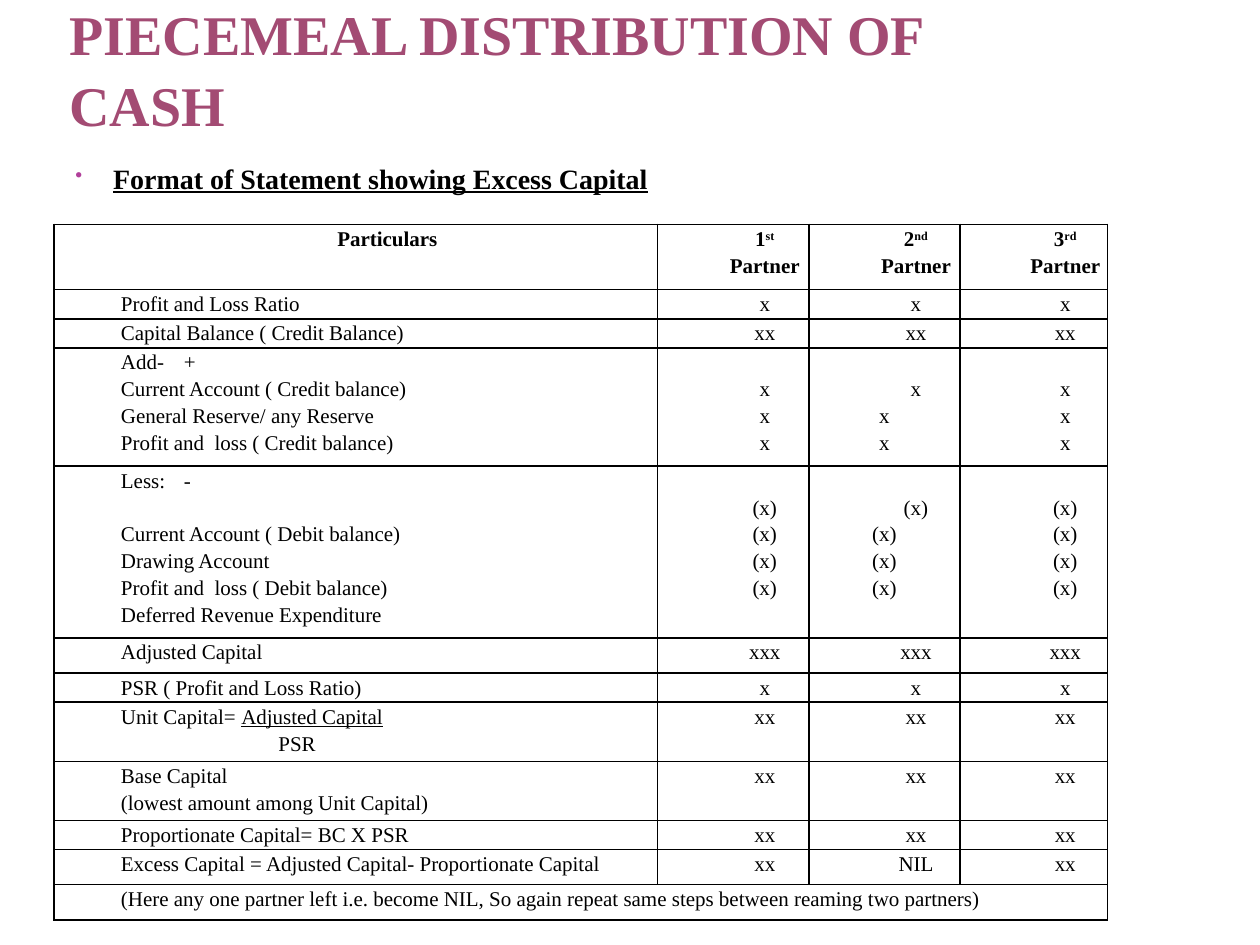
from dataclasses import dataclass

from lxml import etree
from pptx import Presentation
from pptx.dml.color import RGBColor
from pptx.enum.text import MSO_ANCHOR, PP_ALIGN as Align
from pptx.oxml.ns import qn
from pptx.util import Inches, Pt


@dataclass(frozen=True)
class Theme:
    font: str = "Times New Roman"
    title_color: str = "A34B73"
    bullet_color: str = "B13F9A"
    ink: str = "000000"
    title_size: float = 32
    heading_size: float = 16
    table_size: float = 12
    line_spacing: float = 1.15
    blank_line: float = 15.25
    border: float = 1


@dataclass(frozen=True)
class Line:
    """One paragraph of a table cell; each run is (text, style)."""
    runs: tuple
    indent: float = 0.5
    tab: float = 0
    space_before: float = 0


THEME = Theme()


def plain(text, **layout):
    return Line(((text, ""),), **layout)


def partner(number, suffix):
    return [Line(((number, "bold"), (suffix, "bold super"), (" Partner", "bold")))]


def same(value):
    """The same single value for all three partners."""
    return [[plain(value)] for _ in range(3)]


def stacked(value, count):
    """Repeated values; the second partner's are indented only on the first line."""
    columns = []
    for later_indent in (0.5, 0, 0.5):
        later = [plain(value, indent=later_indent) for _ in range(count - 1)]
        columns.append([plain(value)] + later)
    return columns


# Each row: height, particulars, partner values
ROWS = [
    (0.52, [Line((("Particulars", "bold"),))],
     [partner("1", "st"), partner("2", "nd"), partner("3", "rd")]),
    (0.23, [plain("Profit and Loss Ratio")], same("x")),
    (0.23, [plain("Capital Balance ( Credit Balance)")], same("xx")),
    (0.94, [plain("Add-\t+", tab=2.25),
            plain("Current Account ( Credit balance)"),
            plain("General Reserve/ any Reserve"),
            plain("Profit and  loss ( Credit balance)")], stacked("x", 3)),
    (1.26, [plain("Less:\t-", tab=2.57),
            plain("Current Account ( Debit balance)", space_before=THEME.blank_line),
            plain("Drawing Account"),
            plain("Profit and  loss ( Debit balance)"),
            plain("Deferred Revenue Expenditure")], stacked("(x)", 4)),
    (0.28, [plain("Adjusted Capital")], same("xxx")),
    (0.23, [plain("PSR ( Profit and Loss Ratio)")], same("x")),
    (0.47, [Line((("Unit Capital= ", ""), ("Adjusted Capital", "underline"))),
            plain("PSR", indent=1.75)], same("xx")),
    (0.47, [plain("Base Capital"), plain("(lowest amount among Unit Capital)")], same("xx")),
    (0.23, [plain("Proportionate Capital= BC X PSR")], same("xx")),
    (0.28, [plain("Excess Capital = Adjusted Capital- Proportionate Capital")],
     [[plain("xx")], [plain("NIL")], [plain("xx")]]),
    (0.28, [plain("(Here any one partner left i.e. become NIL, So again repeat same steps "
                  "between reaming two partners)")], []),
]
COLUMN_WIDTHS = (4.79, 1.2, 1.2, 1.17)


def add_run(paragraph, text, size, color, style=""):
    run = paragraph.add_run()
    run.text = text
    font = run.font
    font.name, font.size = THEME.font, Pt(size)
    font.color.rgb = RGBColor.from_string(color)
    font.bold = "bold" in style
    font.underline = "underline" in style
    if "super" in style:
        run._r.get_or_add_rPr().set("baseline", "30000")


def add_text_box(slide, box, anchor, inset_x, inset_y):
    frame = slide.shapes.add_textbox(*map(Inches, box)).text_frame
    frame.word_wrap = True
    frame.vertical_anchor = anchor
    frame.margin_left = frame.margin_right = Inches(inset_x)
    frame.margin_top = frame.margin_bottom = Inches(inset_y)
    return frame.paragraphs[0]


def add_title(slide, box):
    paragraph = add_text_box(slide, box, MSO_ANCHOR.BOTTOM, 0.05, 0)
    paragraph.line_spacing = 1.05
    add_run(paragraph, "PIECEMEAL DISTRIBUTION OF CASH",
            THEME.title_size, THEME.title_color, "bold")


def add_heading(slide, box):
    paragraph = add_text_box(slide, box, MSO_ANCHOR.TOP, 0.1, 0.05)
    paragraph.alignment = Align.JUSTIFY
    properties = paragraph._p.get_or_add_pPr()
    properties.set("marL", str(Inches(0.3)))
    properties.set("indent", str(Inches(-0.3)))
    color = etree.SubElement(properties, qn("a:buClr"))
    etree.SubElement(color, qn("a:srgbClr"), val=THEME.bullet_color)
    etree.SubElement(properties, qn("a:buSzPct"), val="73000")
    etree.SubElement(properties, qn("a:buChar"), char="•")
    add_run(paragraph, "Format of Statement showing Excess Capital",
            THEME.heading_size, THEME.ink, "bold underline")


def style_cell(cell):
    cell.margin_left = cell.margin_right = Inches(0.03)
    cell.margin_top = cell.margin_bottom = 0
    properties = cell._tc.get_or_add_tcPr()
    for side in ("lnL", "lnR", "lnT", "lnB"):
        border = etree.SubElement(properties, qn(f"a:{side}"), w=str(Pt(THEME.border)))
        fill = etree.SubElement(border, qn("a:solidFill"))
        etree.SubElement(fill, qn("a:srgbClr"), val=THEME.ink)
    cell.fill.background()


def fill_cell(cell, lines, alignment):
    frame = cell.text_frame
    for index, line in enumerate(lines):
        paragraph = frame.add_paragraph() if index else frame.paragraphs[0]
        paragraph.alignment = alignment
        paragraph.line_spacing = THEME.line_spacing
        if line.space_before:
            paragraph.space_before = Pt(line.space_before)
        properties = paragraph._p.get_or_add_pPr()
        properties.set("marL", str(Inches(line.indent)))
        properties.set("indent", "0")
        if line.tab:
            tabs = etree.SubElement(properties, qn("a:tabLst"))
            etree.SubElement(tabs, qn("a:tab"), pos=str(Inches(line.tab)), algn="l")
        for text, style in line.runs:
            add_run(paragraph, text, THEME.table_size, THEME.ink, style)


def add_statement(slide, box):
    table = slide.shapes.add_table(len(ROWS), len(COLUMN_WIDTHS), *map(Inches, box)).table
    table.first_row = table.horz_banding = False
    for column, width in zip(table.columns, COLUMN_WIDTHS):
        column.width = Inches(width)
    for row_index, (height, particulars, values) in enumerate(ROWS):
        row = table.rows[row_index]
        row.height = Inches(height)
        cells = list(row.cells)
        for cell in cells:
            style_cell(cell)
        if not values:
            cells[0].merge(cells[-1])
        fill_cell(cells[0], particulars, Align.JUSTIFY if row_index else Align.CENTER)
        for cell, lines in zip(cells[1:], values):
            fill_cell(cell, lines, Align.CENTER)
            if len(lines) > 1:
                cell.margin_top = Pt(THEME.blank_line)


def main():
    presentation = Presentation()
    presentation.slide_width, presentation.slide_height = Inches(10), Inches(7.5)
    slide = presentation.slides.add_slide(presentation.slide_layouts[6])
    add_title(slide, (0.5, 0, 7.92, 1.09))
    add_heading(slide, (0.5, 1.23, 7.92, 0.4))
    add_statement(slide, (0.43, 1.78, sum(COLUMN_WIDTHS), sum(row[0] for row in ROWS)))
    presentation.save("out.pptx")


if __name__ == "__main__":
    main()
